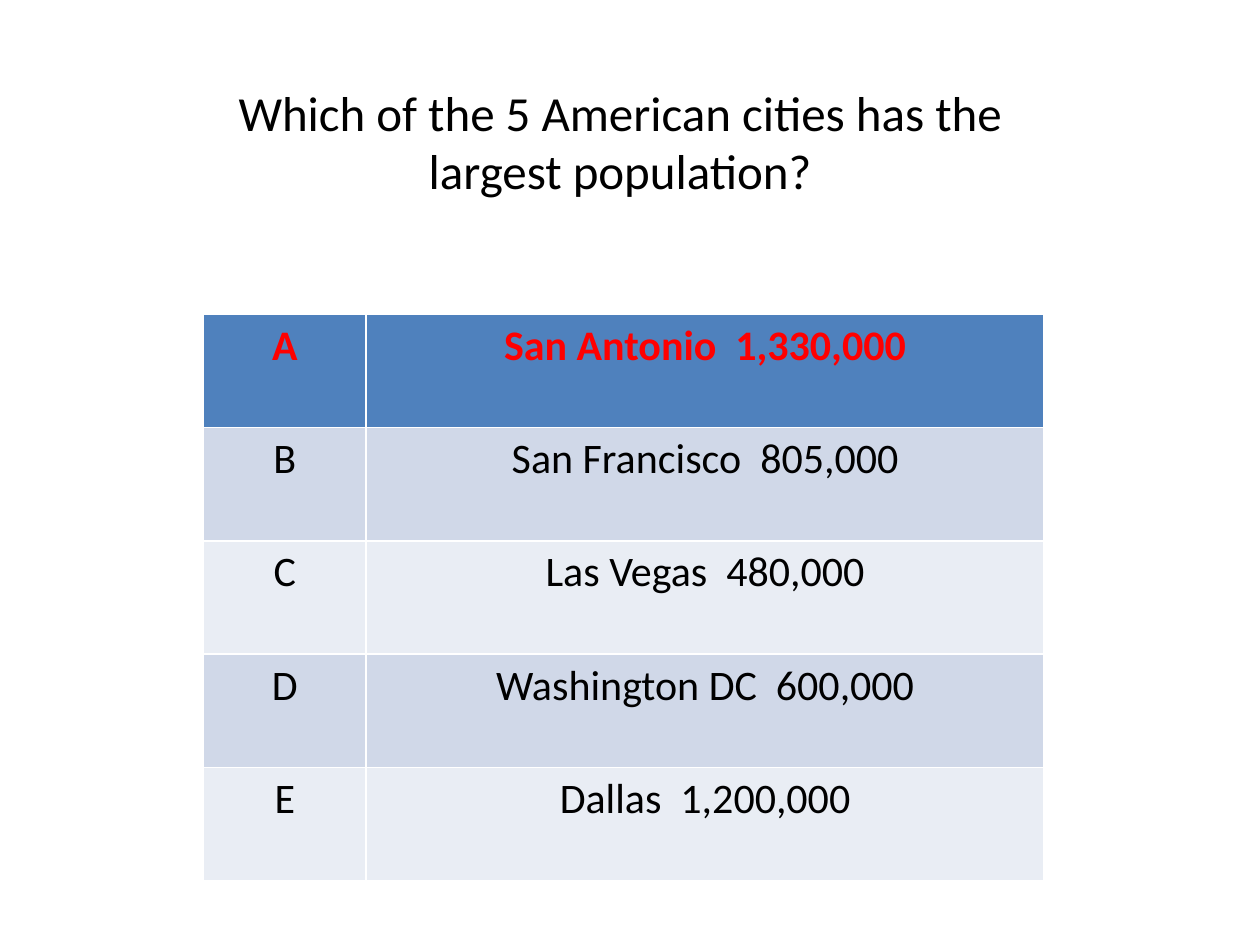
from pptx import Presentation
from pptx.dml.color import RGBColor as RGB
from pptx.enum.text import PP_ALIGN as Align
from pptx.util import Cm, Pt

CITIES = [
    ("A", "San Antonio  1,330,000"),
    ("B", "San Francisco  805,000"),
    ("C", "Las Vegas  480,000"),
    ("D", "Washington DC  600,000"),
    ("E", "Dallas  1,200,000"),
]
HEAD, BANDS = "4F81BD", ("E9EDF4", "D0D8E8")


def paint(part, color):
    """Give a fill or a font a solid hex colour."""
    if hasattr(part, "solid"):
        part.solid()
        part.fore_color.rgb = RGB.from_string(color)
    else:
        part.color.rgb = RGB.from_string(color)


def write(frame, text, size, color="000000", bold=False):
    frame.text = text
    line = frame.paragraphs[0]
    line.alignment = Align.CENTER
    font = line.font
    font.name, font.size, font.bold = "Calibri", Pt(size), bold
    paint(font, color)


def add_title(slide, left, top, width, height):
    box = slide.shapes.add_textbox(Cm(left), Cm(top), Cm(width), Cm(height))
    box.text_frame.word_wrap = True
    write(box.text_frame, "Which of the 5 American cities has the largest population?", 28)


def add_cities(slide, left, top, width, height):
    """Lay out the answers; the built-in table style draws the white rules."""
    table = slide.shapes.add_table(
        len(CITIES), 2, Cm(left), Cm(top), Cm(width), Cm(height)).table
    key = 3.28
    for col, size in zip(table.columns, (key, width - key)):
        col.width = Cm(size)
    for r, texts in enumerate(CITIES):
        first = r == 0
        for c, text in enumerate(texts):
            cell = table.cell(r, c)
            paint(cell.fill, HEAD if first else BANDS[r % 2])
            write(cell.text_frame, text, 24, "FF0000" if first else "000000", first)


def main():
    deck = Presentation()
    deck.slide_width, deck.slide_height = Cm(25.4), Cm(19.05)
    slide = deck.slides.add_slide(deck.slide_layouts[6])
    add_cities(slide, 4.1, 6.33, 16.95, 11.43)
    add_title(slide, 3.3, 1.53, 18.4, 2.65)
    deck.save("out.pptx")


if __name__ == "__main__":
    main()
